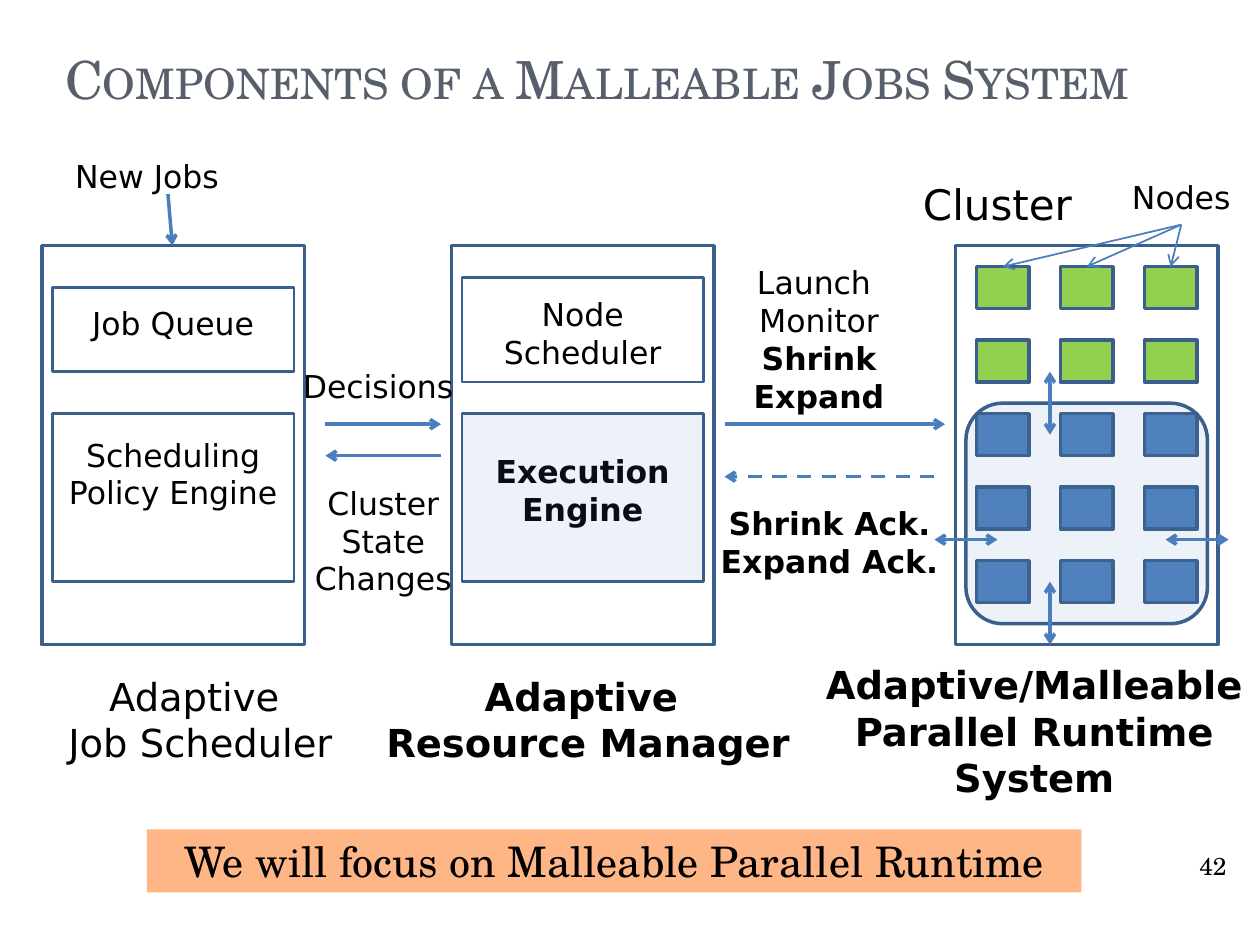
from collections import namedtuple
from dataclasses import dataclass

from lxml import etree
from pptx import Presentation
from pptx.dml.color import RGBColor
from pptx.enum.dml import MSO_LINE
from pptx.enum.shapes import MSO_CONNECTOR, MSO_SHAPE
from pptx.enum.text import MSO_ANCHOR, MSO_AUTO_SIZE, PP_ALIGN
from pptx.oxml.ns import qn
from pptx.util import Pt

RECT, ROUNDED = MSO_SHAPE.RECTANGLE, MSO_SHAPE.ROUNDED_RECTANGLE
STRAIGHT, DASH = MSO_CONNECTOR.STRAIGHT, MSO_LINE.DASH
LEFT, CENTER, RIGHT = PP_ALIGN.LEFT, PP_ALIGN.CENTER, PP_ALIGN.RIGHT
TOP, MIDDLE = MSO_ANCHOR.TOP, MSO_ANCHOR.MIDDLE
FIT_SHAPE, NO_FIT = MSO_AUTO_SIZE.SHAPE_TO_FIT_TEXT, MSO_AUTO_SIZE.NONE
TITLE_ONLY = 5

Box = namedtuple("Box", "left top width height")


@dataclass(frozen=True)
class Theme:
    body_font: str = "DejaVu Sans"
    title_font: str = "TeX Gyre Schola"
    text: str = "000000"
    title: str = "575F6D"
    outline: str = "3A5F8C"
    arrow: str = "4B7EBC"
    busy: str = "4F81BD"
    free: str = "92D050"
    banner: str = "FEB687"
    label_size: int = 18
    caption_size: int = 22
    heading_size: int = 24
    title_size: int = 30
    number_size: int = 14


THEME = Theme()


def within(box, left, top, width, height=30):
    """Turn offsets inside a region into a box on the page."""
    return Box(box.left + left, box.top + top, width, height)


def write(frame, lines, size, bold_from=None, font=THEME.body_font,
          color=THEME.text, align=CENTER, anchor=TOP):
    """Fill a frame; lines from index bold_from onwards are bold."""
    frame.text = "\n".join(lines)
    frame.word_wrap = True
    frame.vertical_anchor = anchor
    for index, para in enumerate(frame.paragraphs):
        para.alignment = align
        for span in para.runs:
            span.font.name = font
            span.font.size = Pt(size)
            span.font.bold = bold_from is not None and index >= bold_from
            span.font.color.rgb = RGBColor.from_string(color)


def add_label(page, box, *lines, size=THEME.label_size, **style):
    label = page.shapes.add_textbox(*map(Pt, box))
    write(label.text_frame, lines, size, **style)
    label.text_frame.auto_size = FIT_SHAPE


def add_block(page, box, fill=None, weight=2, kind=RECT, opacity=None):
    block = page.shapes.add_shape(kind, *map(Pt, box))
    block.shadow.inherit = False
    if fill:
        block.fill.solid()
        block.fill.fore_color.rgb = RGBColor.from_string(fill)
    else:
        block.fill.background()
    if opacity:
        color = block._element.spPr.find(".//" + qn("a:srgbClr"))
        etree.SubElement(color, qn("a:alpha"), val=str(opacity * 1000))
    if weight:
        block.line.width = Pt(weight)
        block.line.color.rgb = RGBColor.from_string(THEME.outline)
    else:
        block.line.fill.background()
    return block


def add_arrow(page, box, start, end, weight=2, both=False, dash=None):
    """Draw an arrow between two points given as offsets in a region."""
    points = [Pt(origin + offset) for point in (start, end)
              for origin, offset in zip((box.left, box.top), point)]
    arrow = page.shapes.add_connector(STRAIGHT, *points)
    arrow.line.width = Pt(weight)
    arrow.line.color.rgb = RGBColor.from_string(THEME.arrow)
    if dash:
        arrow.line.dash_style = dash
    properties = arrow._element.spPr
    outline = properties.find(qn("a:ln"))
    for tag in ("a:headEnd", "a:tailEnd") if both else ("a:tailEnd",):
        etree.SubElement(outline, qn(tag), type="arrow")
    etree.SubElement(properties, qn("a:effectLst"))


def place_title(page, box):
    title = page.shapes.title
    title.left, title.top, title.width, title.height = map(Pt, box)
    write(title.text_frame, ["Components of a Malleable Jobs System"],
          THEME.title_size, font=THEME.title_font, color=THEME.title,
          align=LEFT, anchor=MIDDLE)
    title.text_frame.auto_size = NO_FIT
    for span in title.text_frame.paragraphs[0].runs:
        span._r.get_or_add_rPr().set("cap", "small")


def place_scheduler(page, box):
    add_block(page, box)
    # Incoming jobs
    add_label(page, within(box, -15, -54, 150), "New Jobs")
    add_arrow(page, box, (72, -29.5), (74.5, 0))
    # Queue and policy
    add_label(page, within(box, 6, 30, 138), "Job Queue")
    add_block(page, within(box, 6, 24, 138, 48), weight=1.5)
    add_label(page, within(box, 6, 105, 138, 51), "Scheduling Policy Engine")
    add_block(page, within(box, 6, 96, 138, 96), weight=1.5)
    add_label(page, within(box, -6, 240.5, 186, 60), "Adaptive",
              " Job Scheduler", size=THEME.caption_size)


def place_manager(page, box):
    add_block(page, box)
    add_label(page, within(box, 6, 24.5, 138, 51), "Node Scheduler")
    add_block(page, within(box, 6, 18, 138, 60), weight=1.5)
    add_label(page, within(box, 6, 114.5, 138, 51), "Execution Engine",
              bold_from=0)
    add_block(page, within(box, 6, 96, 138, 96), THEME.busy, 1.5, opacity=10)
    add_label(page, within(box, -54, 240.5, 264, 60), "Adaptive ",
              "Resource Manager", size=THEME.caption_size, bold_from=0)


def place_cluster(page, box):
    add_block(page, box)
    # Grid of nodes: two free rows above three busy ones
    for row in range(5):
        for column in range(3):
            add_block(page, within(box, 12 + 48 * column, 12 + 42 * row, 30, 24),
                      THEME.free if row < 2 else THEME.busy)
    # Malleable job and the directions it can grow in
    add_block(page, within(box, 6, 90, 138, 126), THEME.busy, kind=ROUNDED,
              opacity=10)
    for top in (72, 192):
        add_arrow(page, box, (54, top), (54, top + 36), both=True)
    for right in (24, 156):
        add_arrow(page, box, (right, 168), (right - 36, 168), both=True)
    # Headings and pointers to the first row
    add_label(page, within(box, -60, -42, 168, 36), "Cluster",
              size=THEME.heading_size)
    add_label(page, within(box, 84, -42, 90), "Nodes")
    for column in range(3):
        add_arrow(page, box, (129, -12), (27 + 48 * column, 12), weight=1)
    add_label(page, within(box, -84, 234, 258, 87),
              "Adaptive/Malleable Parallel Runtime System",
              size=THEME.caption_size, bold_from=0)


def place_decisions(page, box):
    add_label(page, within(box, -78, 66, 240), "Decisions")
    add_arrow(page, box, (12, 102), (78, 102))
    add_arrow(page, box, (78, 120), (12, 120))
    add_label(page, within(box, -18, 132.5, 126, 72), "Cluster State Changes")


def place_commands(page, box):
    add_label(page, within(box, -60, 6.5, 240, 94), "Launch ", "Monitor",
              "Shrink", "Expand", bold_from=2)
    add_arrow(page, box, (6, 102), (132, 102))
    add_arrow(page, box, (126, 132), (6, 132), dash=DASH)
    add_label(page, within(box, -54, 144, 240, 51), "Shrink Ack.",
              "Expand Ack.", bold_from=0)


def place_footer(page, box):
    banner = add_block(page, within(box, 0, 0, 534, 36), THEME.banner, weight=0)
    write(banner.text_frame, ["We will focus on Malleable Parallel Runtime"],
          THEME.heading_size, font=THEME.title_font, anchor=MIDDLE)
    number = page.shapes.add_textbox(
        *map(Pt, within(box, box.width - 48, 0, 48, 41)))
    write(number.text_frame, ["42"], THEME.number_size, font=THEME.title_font,
          align=RIGHT, anchor=MIDDLE)


def main():
    deck = Presentation()
    deck.slide_width, deck.slide_height = Pt(720), Pt(540)
    page = deck.slides.add_slide(deck.slide_layouts[TITLE_ONLY])
    top, height = 140.4, 228
    place_title(page, Box(30, 0, 666, 90))
    place_scheduler(page, Box(24, top, 150, height))
    place_manager(page, Box(258, top, 150, height))
    place_cluster(page, Box(546, top, 150, height))
    place_decisions(page, Box(174, top, 84, height))
    place_commands(page, Box(408, top, 138, height))
    place_footer(page, Box(84, 474, 624, 41))
    deck.save("out.pptx")


if __name__ == "__main__":
    main()
